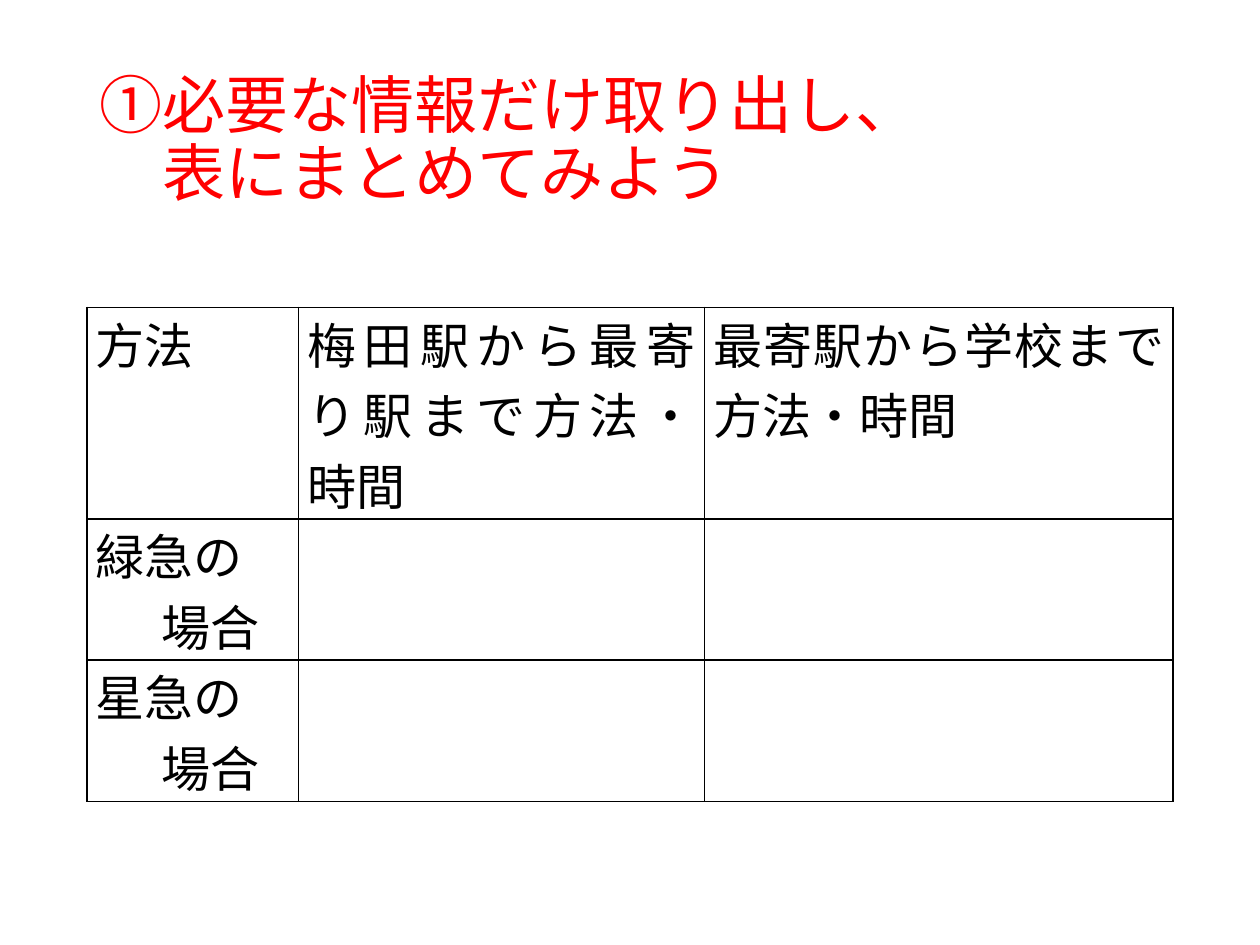
from dataclasses import dataclass

import lxml.etree
import pptx
import pptx.dml.color
import pptx.enum.text
import pptx.oxml.ns
import pptx.util

Inches = pptx.util.Inches
Pt = pptx.util.Pt
Align = pptx.enum.text.PP_ALIGN
Anchor = pptx.enum.text.MSO_ANCHOR


@dataclass(frozen=True)
class Theme:
    font: str = "Calibri"
    title_size: float = 36
    cell_size: float = 28
    title_color: str = "FF0000"
    ink: str = "000000"
    border_width: float = 1


@dataclass(frozen=True)
class Row:
    height: float
    cells: tuple[tuple[str, ...], ...]


THEME = Theme()
LEFT, WIDTH = 0.69, 8.62
COLUMNS = (1.68, 3.22, 3.72)
ROWS = (
    Row(1.68, (("方法",), ("梅田駅から最寄り駅まで方法・時間",), ("最寄駅から学校まで方法・時間",))),
    Row(1.12, (("緑急の", "場合"), (), ())),
    Row(1.12, (("星急の", "場合"), (), ())),
)


def write(p, text: str, *, size: float, color: str, align=Align.LEFT,
          spacing: float = 1.0, margin: float = 0, indent: float = 0) -> None:
    p.alignment = align
    p.line_spacing = spacing
    p_pr = p._p.get_or_add_pPr()
    p_pr.set("marL", str(Inches(margin)))
    p_pr.set("indent", str(Inches(indent)))
    p.text = text
    for r in p.runs:
        r.font.name = THEME.font
        r.font.size = Pt(size)
        r.font.color.rgb = pptx.dml.color.RGBColor.from_string(color)


def add_title(s, text: str) -> None:
    sp = s.shapes.add_textbox(Inches(LEFT), Inches(0.4), Inches(WIDTH), Inches(1.45))
    tf = sp.text_frame
    tf.word_wrap = True
    tf.vertical_anchor = Anchor.MIDDLE
    write(tf.paragraphs[0], text, size=THEME.title_size, color=THEME.title_color,
          spacing=0.9, margin=0.5, indent=-0.5)


def add_borders(cell) -> None:
    qn = pptx.oxml.ns.qn
    tc_pr = cell._tc.get_or_add_tcPr()
    for side in ("a:lnL", "a:lnR", "a:lnT", "a:lnB"):
        ln = lxml.etree.SubElement(tc_pr, qn(side), w=str(Pt(THEME.border_width)))
        fill = lxml.etree.SubElement(ln, qn("a:solidFill"))
        lxml.etree.SubElement(fill, qn("a:srgbClr"), val=THEME.ink)


def fill_cell(cell, lines: tuple[str, ...]) -> None:
    cell.margin_left = cell.margin_right = Inches(0.07)
    cell.margin_top = cell.margin_bottom = 0
    add_borders(cell)
    cell.fill.background()
    tf = cell.text_frame
    for i, line in enumerate(lines):
        p = tf.add_paragraph() if i else tf.paragraphs[0]
        write(p, line, size=THEME.cell_size, color=THEME.ink,
              align=Align.JUSTIFY, margin=0.52 if i else 0)


def add_route_table(s, rows: tuple[Row, ...]) -> None:
    height = sum(row.height for row in rows)
    table = s.shapes.add_table(len(rows), len(COLUMNS), Inches(LEFT), Inches(2.44),
                               Inches(WIDTH), Inches(height)).table
    table.first_row = table.horz_banding = False
    for column, width in zip(table.columns, COLUMNS):
        column.width = Inches(width)
    for table_row, row in zip(table.rows, rows):
        table_row.height = Inches(row.height)
        for cell, lines in zip(table_row.cells, row.cells):
            fill_cell(cell, lines)


def main() -> None:
    prs = pptx.Presentation()
    prs.slide_width, prs.slide_height = Inches(10), Inches(7.5)
    s = prs.slides.add_slide(prs.slide_layouts[6])
    add_title(s, "①必要な情報だけ取り出し、\v表にまとめてみよう")
    add_route_table(s, ROWS)
    prs.save("out.pptx")


if __name__ == "__main__":
    main()
